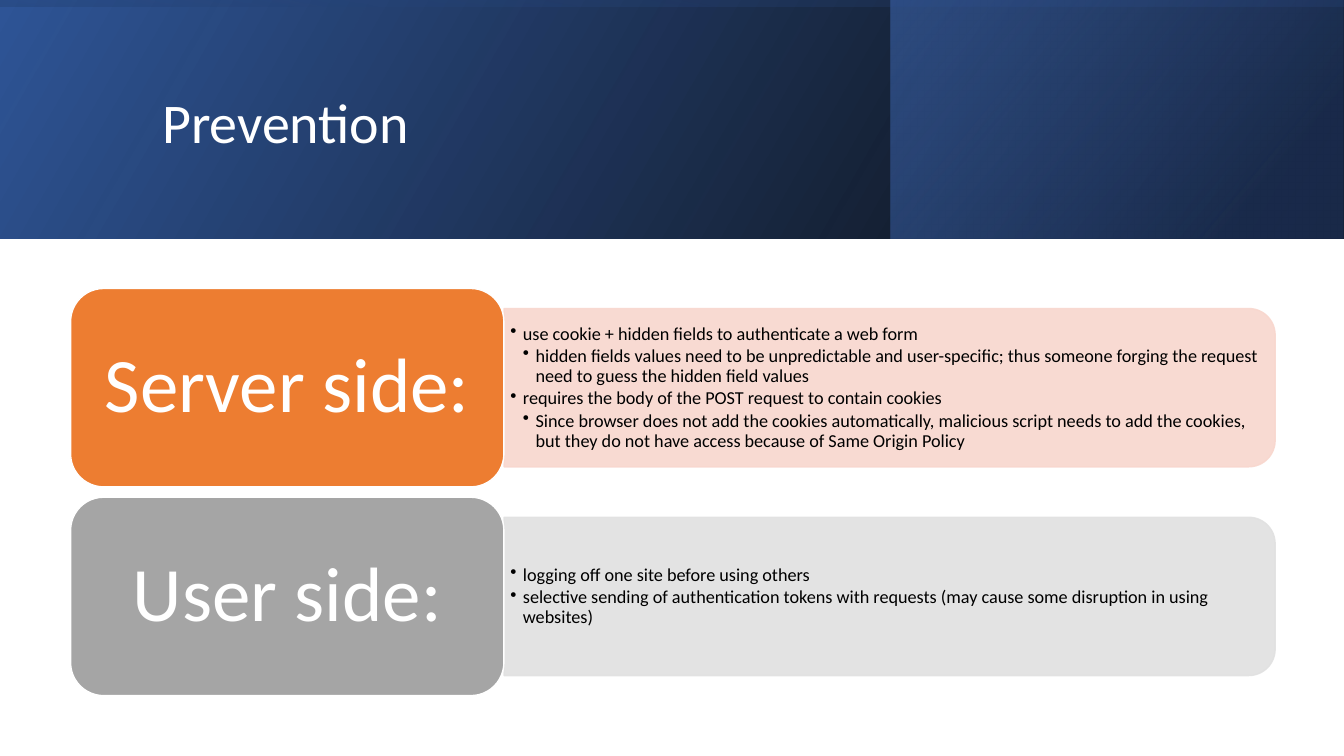
from dataclasses import dataclass

from lxml.etree import SubElement
from pptx import Presentation
from pptx.dml.color import RGBColor
from pptx.enum.shapes import MSO_SHAPE
from pptx.enum.text import MSO_ANCHOR, PP_ALIGN
from pptx.oxml import parse_xml
from pptx.oxml.ns import nsdecls, qn
from pptx.util import Cm, Pt


@dataclass(frozen=True)
class Theme:
    font: str = "Calibri"
    white: str = "FFFFFF"
    black: str = "000000"
    navy: str = "203864"
    blue: str = "2F5597"
    sky: str = "4472C4"
    orange: str = "ED7D31"
    peach: str = "F8D7CE"
    gray: str = "A5A5A5"
    silver: str = "E1E1E1"
    title: int = 40
    label: int = 55
    body: int = 13


THEME = Theme()
WIDE, HIGH = 33.87, 19.05
BAND = 6.02

# Each side: label, label colour, panel colour, (level, point) pairs
SIDES = [
    ("Server side:", THEME.orange, THEME.peach, [
        (1, "use cookie + hidden fields to authenticate a web form"),
        (2, "hidden fields values need to be unpredictable and user-specific; "
            "thus someone forging the request need to guess the hidden field values"),
        (1, "requires the body of the POST request to contain cookies"),
        (2, "Since browser does not add the cookies automatically, malicious script "
            "needs to add the cookies, but they do not have access because of "
            "Same Origin Policy"),
    ]),
    ("User side:", THEME.gray, THEME.silver, [
        (1, "logging off one site before using others"),
        (1, "selective sending of authentication tokens with requests "
            "(may cause some disruption in using websites)"),
    ]),
]


def apply(item, form):
    for name, value in form.items():
        setattr(item, name, value)


def frame(box, pad_x, pad_y):
    apply(box.text_frame, {
        "word_wrap": True, "vertical_anchor": MSO_ANCHOR.MIDDLE,
        "margin_left": Cm(pad_x), "margin_right": Cm(pad_x),
        "margin_top": Cm(pad_y), "margin_bottom": Cm(pad_y)})
    return box.text_frame


def write(para, text, size, color, **form):
    run = para.add_run()
    run.text = text
    apply(run.font, {"name": THEME.font, "size": Pt(size)})
    run.font.color.rgb = RGBColor.from_string(color)
    apply(para, {"line_spacing": 0.9, **form})


def add_block(slide, kind, mid_x, mid_y, wide, high, turn=0):
    """Place a plain shape by its centre; sizes are those before turning."""
    block = slide.shapes.add_shape(
        kind, Cm(mid_x - wide / 2), Cm(mid_y - high / 2), Cm(wide), Cm(high))
    block.rotation = turn
    block.shadow.inherit = False
    return block


def paint(block, fill, line, alpha=100):
    block.fill.solid()
    block.fill.fore_color.rgb = RGBColor.from_string(fill)
    block.line.color.rgb = RGBColor.from_string(line)
    block.line.width = Pt(1)
    if alpha < 100:
        for tint in block.element.spPr.iter(qn("a:srgbClr")):
            SubElement(tint, qn("a:alpha"), val=str(alpha * 1000))


def add_fade(slide, mid_x, wide, high, turn, angle, stops):
    """Add a mirrored header block with a see-through gradient."""
    block = add_block(slide, MSO_SHAPE.RECTANGLE, mid_x, BAND / 2, wide, high, turn)
    block.line.fill.background()
    marks = "".join(
        f'<a:gs pos="{pos * 1000}"><a:srgbClr val="{color}">'
        f'<a:alpha val="{alpha * 1000}"/></a:srgbClr></a:gs>'
        for pos, color, alpha in stops)
    fade = parse_xml(
        f'<a:gradFill {nsdecls("a")} rotWithShape="1"><a:gsLst>{marks}</a:gsLst>'
        f'<a:lin ang="{angle * 60000}" scaled="0"/></a:gradFill>')
    props = block.element.spPr
    props.find(qn("a:xfrm")).set("flipH", "1")
    props.find(qn("a:prstGeom")).addnext(fade)


def add_text(slide, left, top, wide, high, pad_x, pad_y):
    box = slide.shapes.add_textbox(Cm(left), Cm(top), Cm(wide), Cm(high))
    return frame(box, pad_x, pad_y)


def add_list(slide, mid_y, points):
    high = 3.61
    text = add_text(slide, 12.73, mid_y - high / 2, 19.23, high, 0.13, 0.08)
    for rank, (level, point) in enumerate(points):
        para = text.add_paragraph() if rank else text.paragraphs[0]
        write(para, point, THEME.body, THEME.black, level=level,
              space_after=Pt(2), alignment=PP_ALIGN.LEFT)
        props = para._p.get_or_add_pPr()
        step = Cm(0.32)
        props.set("marL", str(step * level))
        props.set("indent", str(-step))
        SubElement(props, qn("a:buChar"), char="•")


def add_side(slide, mid_y, label, color, tint, points):
    panel = add_block(slide, MSO_SHAPE.ROUND_2_SAME_RECTANGLE,
                      22.42, mid_y, 3.99, 19.43, 90)
    paint(panel, tint, tint, 90)
    add_list(slide, mid_y, points)
    tab = add_block(slide, MSO_SHAPE.ROUNDED_RECTANGLE, 7.24, mid_y, 10.92, 5)
    paint(tab, color, THEME.white)
    write(frame(tab, 0.58, 0.28).paragraphs[0], label, THEME.label,
          THEME.white, alignment=PP_ALIGN.CENTER)


def main():
    deck = Presentation()
    apply(deck, {"slide_width": Cm(WIDE), "slide_height": Cm(HIGH)})
    slide = deck.slides.add_slide(deck.slide_layouts[6])

    # Header band: base, right block, then a sheen over the full width
    add_fade(slide, WIDE / 2, WIDE, BAND, 0, 330,
             [(0, THEME.black, 96), (100, THEME.blue, 100)])
    add_fade(slide, 28.15, 11.39, BAND, 0, 320,
             [(19, THEME.navy, 68), (100, THEME.sky, 48)])
    add_fade(slide, WIDE / 2, BAND, WIDE, 270, 350,
             [(23, THEME.blue, 16), (99, THEME.black, 45)])

    # Title
    title = add_text(slide, 3.84, 0.97, 27, 4.37, 0.25, 0.13)
    write(title.paragraphs[0], "Prevention", THEME.title, THEME.white)

    # One row for each side
    for row, side in enumerate(SIDES):
        add_side(slide, 9.77 + 5.26 * row, *side)

    deck.save("out.pptx")


if __name__ == "__main__":
    main()
